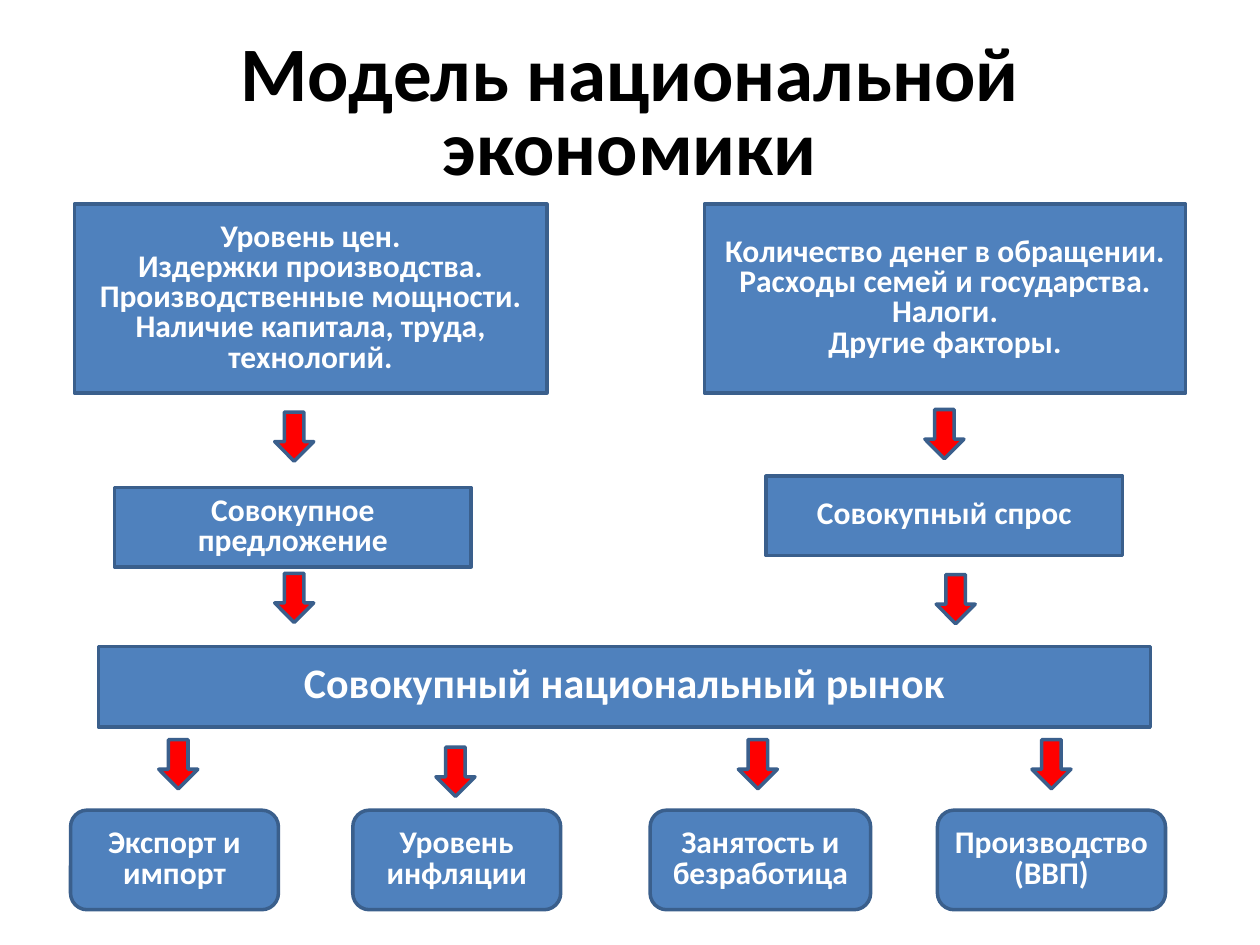
from pptx import Presentation
from pptx.dml.color import RGBColor
from pptx.enum.shapes import MSO_SHAPE
from pptx.enum.text import MSO_ANCHOR, MSO_AUTO_SIZE, PP_ALIGN
from pptx.util import Inches, Pt


def color(value):
    return RGBColor.from_string(value)


class SlideBuilder:
    font_name = "Calibri"
    box_fill = "4F81BD"
    arrow_fill = "FF0000"
    outline = "3A5F8C"
    box_text = "FFFFFF"
    title_text = "000000"

    def __init__(self, slide):
        self.slide = slide

    def format_text(self, text_frame, text, size, text_color):
        text_frame.text = text
        text_frame.word_wrap = True
        text_frame.auto_size = MSO_AUTO_SIZE.NONE
        text_frame.vertical_anchor = MSO_ANCHOR.MIDDLE
        for paragraph in text_frame.paragraphs:
            paragraph.alignment = PP_ALIGN.CENTER
            paragraph.line_spacing = 0.8
            for run in paragraph.runs:
                run.font.name = self.font_name
                run.font.size = Pt(size)
                run.font.bold = True
                run.font.color.rgb = color(text_color)

    def title(self, text, left, top, width, height):
        shape = self.slide.shapes.title
        shape.left, shape.top = Inches(left), Inches(top)
        shape.width, shape.height = Inches(width), Inches(height)
        self.format_text(shape.text_frame, text, 44, self.title_text)

    def shape(self, kind, left, top, width, height, fill):
        shape = self.slide.shapes.add_shape(
            kind, Inches(left), Inches(top), Inches(width), Inches(height))
        shape.shadow.inherit = False
        shape.fill.solid()
        shape.fill.fore_color.rgb = color(fill)
        shape.line.color.rgb = color(self.outline)
        shape.line.width = Pt(2)
        return shape

    def box(self, text, left, top, width, height, size=18):
        shape = self.shape(MSO_SHAPE.RECTANGLE, left, top, width, height, self.box_fill)
        self.format_text(shape.text_frame, text, size, self.box_text)

    def rounded_box(self, text, left, top, width, height):
        shape = self.shape(MSO_SHAPE.ROUNDED_RECTANGLE, left, top, width, height, self.box_fill)
        shape.text_frame.margin_left = shape.text_frame.margin_right = Inches(0.05)
        self.format_text(shape.text_frame, text, 18, self.box_text)

    def down_arrow(self, left, top):
        self.shape(MSO_SHAPE.DOWN_ARROW, left, top, 0.31, 0.39, self.arrow_fill)


def main():
    presentation = Presentation()
    presentation.slide_width, presentation.slide_height = Inches(10), Inches(7.5)
    builder = SlideBuilder(presentation.slides.add_slide(presentation.slide_layouts[5]))

    builder.title("Модель национальной экономики", 0.5, 0.3, 9, 1.25)

    outcomes = [
        ("Экспорт и импорт", 0.56, 1.65),
        ("Уровень инфляции", 2.8, 1.65),
        ("Занятость и безработица", 5.16, 1.75),
        ("Производство (ВВП)", 7.44, 1.81),
    ]
    for text, left, width in outcomes:
        builder.rounded_box(text, left, 6.43, width, 0.79)

    builder.box("Совокупный национальный рынок", 0.78, 5.13, 8.35, 0.64, size=24)
    builder.box("Совокупное предложение", 0.91, 3.87, 2.83, 0.63)
    builder.box("Совокупный спрос", 6.08, 3.78, 2.83, 0.63)

    supply_factors = [
        "Уровень цен.",
        "Издержки производства.",
        "Производственные мощности.",
        "Наличие капитала, труда, технологий.",
    ]
    demand_factors = [
        "Количество денег в обращении.",
        "Расходы семей и государства.",
        "Налоги.",
        "Другие факторы.",
    ]
    builder.box("\n".join(supply_factors), 0.59, 1.62, 3.75, 1.5)
    builder.box("\n".join(demand_factors), 5.59, 1.62, 3.82, 1.5)

    factor_arrows = [(2.18, 3.27), (7.34, 3.25)]
    market_arrows = [(2.18, 4.55), (7.43, 4.56)]
    outcome_arrows = [(1.26, 5.87), (3.46, 5.93), (5.86, 5.87), (8.19, 5.87)]
    for left, top in factor_arrows + market_arrows + outcome_arrows:
        builder.down_arrow(left, top)

    presentation.save("out.pptx")


if __name__ == "__main__":
    main()
